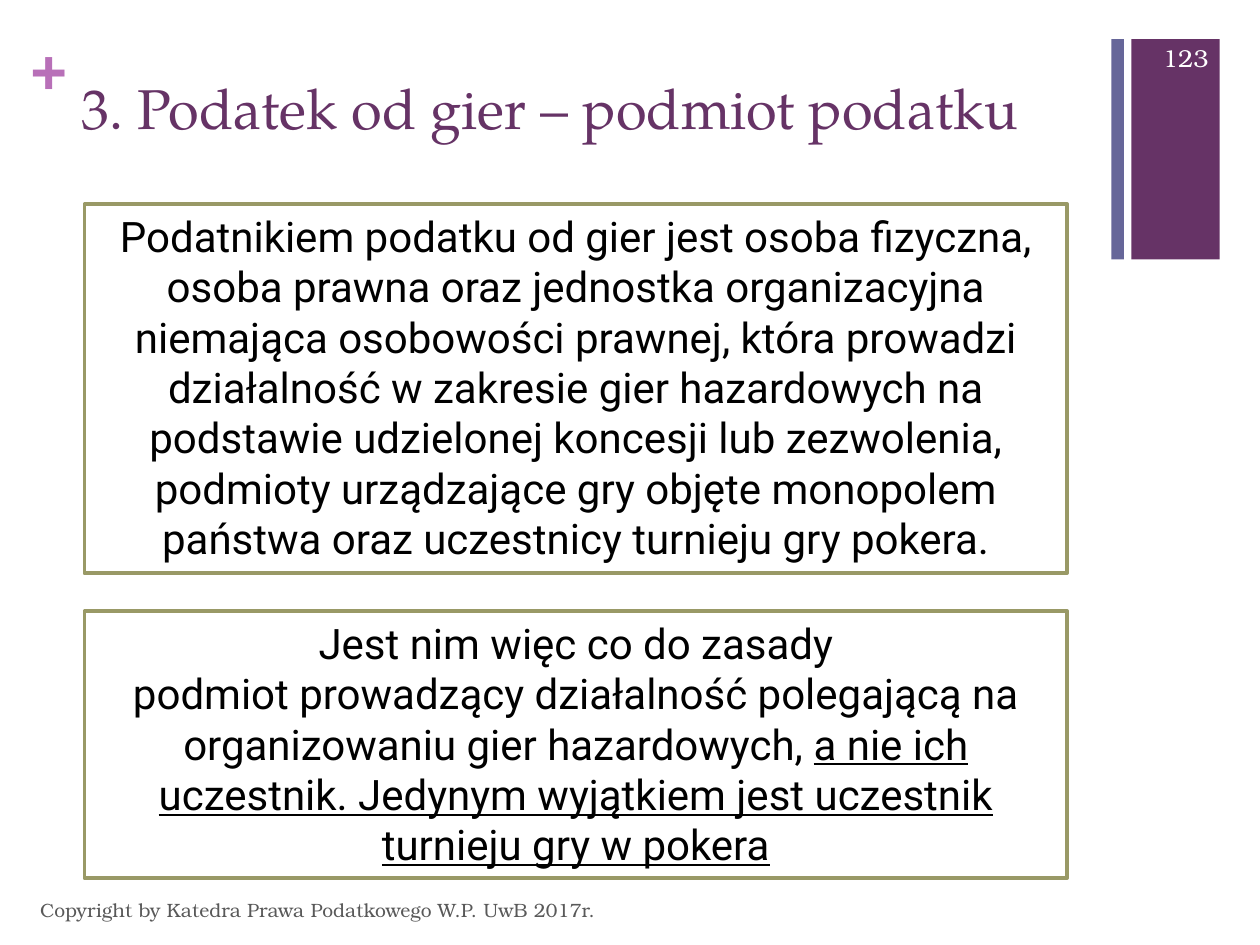
from dataclasses import dataclass

from pptx import Presentation
from pptx.dml.color import RGBColor
from pptx.enum import shapes, text
from pptx.util import Emu, Pt

SCALE = 9144


@dataclass(frozen=True)
class Theme:
    purple: str = "663366"
    blue: str = "666699"
    pink: str = "B870B8"
    olive: str = "999966"
    white: str = "FFFFFF"
    black: str = "000000"
    grey: str = "595959"
    sign_font: str = "Arial"
    title_font: str = "TeX Gyre Pagella"
    body_font: str = "Roboto"
    footer_font: str = "TeX Gyre Bonum"
    sign_size: int = 36
    title_size: int = 32
    body_size: int = 24
    number_size: int = 14
    footer_size: int = 11
    border: int = 2


THEME = Theme()


def px(value):
    return Emu(value * SCALE)


def color(value):
    return RGBColor.from_string(value)


def style_frame(frame, anchor, inset=(10, 5)):
    frame.word_wrap = True
    frame.auto_size = text.MSO_AUTO_SIZE.NONE
    frame.vertical_anchor = anchor
    frame.margin_left = frame.margin_right = px(inset[0])
    frame.margin_top = frame.margin_bottom = px(inset[1])


def add_run(paragraph, words, font, size, ink, bold=False, underline=False):
    run = paragraph.add_run()
    run.text = words
    run.font.name = font
    run.font.size = Pt(size)
    run.font.color.rgb = color(ink)
    run.font.bold = bold
    run.font.underline = underline


def add_rectangle(slide, box, fill, border=None):
    shape = slide.shapes.add_shape(shapes.MSO_SHAPE.RECTANGLE, *map(px, box))
    shape.shadow.inherit = False
    shape.fill.solid()
    shape.fill.fore_color.rgb = color(fill)
    if border:
        shape.line.color.rgb = color(border)
        shape.line.width = Pt(THEME.border)
    else:
        shape.line.fill.background()
    return shape


def add_label(slide, box, words, font, size, ink, anchor=text.MSO_ANCHOR.MIDDLE,
              align=text.PP_ALIGN.LEFT, inset=(10, 5), bold=False):
    frame = slide.shapes.add_textbox(*map(px, box)).text_frame
    style_frame(frame, anchor, inset)
    paragraph = frame.paragraphs[0]
    paragraph.alignment = align
    add_run(paragraph, words, font, size, ink, bold)


def add_corner(slide, box, number):
    left, top, width, height = box
    stripe, gap = 10, 6
    offset = stripe + gap
    add_rectangle(slide, (left + offset, top, width - offset, height), THEME.purple)
    add_rectangle(slide, (left, top, stripe, height), THEME.blue)
    add_label(slide, (left + 26, top - 5, 61, 40), number, THEME.footer_font,
              THEME.number_size, THEME.white, align=text.PP_ALIGN.RIGHT)


def add_heading(slide, box, words):
    left, top, width, height = box
    add_label(slide, (left - 31, top - 28, 29, 61), "+", THEME.sign_font,
              THEME.sign_size, THEME.pink, anchor=text.MSO_ANCHOR.TOP,
              inset=(0, 0), bold=True)
    title = slide.shapes.title
    title.left, title.top, title.width, title.height = map(px, box)
    style_frame(title.text_frame, text.MSO_ANCHOR.TOP)
    paragraph = title.text_frame.paragraphs[0]
    paragraph.alignment = text.PP_ALIGN.LEFT
    add_run(paragraph, words, THEME.title_font, THEME.title_size, THEME.purple)


def add_panel(slide, box, paragraphs):
    frame = add_rectangle(slide, box, THEME.white, THEME.olive).text_frame
    style_frame(frame, text.MSO_ANCHOR.TOP)
    for index, runs in enumerate(paragraphs):
        paragraph = frame.add_paragraph() if index else frame.paragraphs[0]
        paragraph.alignment = text.PP_ALIGN.CENTER
        for words, underline in runs:
            add_run(paragraph, words, THEME.body_font, THEME.body_size,
                    THEME.black, underline=underline)


def add_footer(slide, box, words):
    add_label(slide, box, words, THEME.footer_font, THEME.footer_size, THEME.grey)


def main():
    presentation = Presentation()
    presentation.slide_width, presentation.slide_height = px(1000), px(750)
    slide = presentation.slides.add_slide(presentation.slide_layouts[5])

    add_corner(slide, (882, 31, 86, 175), "123")
    add_heading(slide, (55, 53, 826, 122), "3. Podatek od gier – podmiot podatku")
    add_footer(slide, (22, 702, 670, 40),
               "Copyright by Katedra Prawa Podatkowego W.P. UwB 2017r.")
    add_panel(slide, (67, 162, 780, 293), [[(
        "Podatnikiem podatku od gier jest osoba fizyczna, osoba prawna oraz "
        "jednostka organizacyjna niemająca osobowości prawnej, która prowadzi "
        "działalność w zakresie gier hazardowych na podstawie udzielonej "
        "koncesji lub zezwolenia, podmioty urządzające gry objęte monopolem "
        "państwa oraz uczestnicy turnieju gry pokera.", False)]])
    add_panel(slide, (67, 485, 780, 212), [
        [("Jest nim więc co do zasady", False)],
        [("podmiot prowadzący działalność polegającą na organizowaniu gier "
          "hazardowych, ", False),
         ("a nie ich uczestnik. Jedynym wyjątkiem jest uczestnik turnieju "
          "gry w pokera", True)],
    ])
    presentation.save("out.pptx")


if __name__ == "__main__":
    main()
